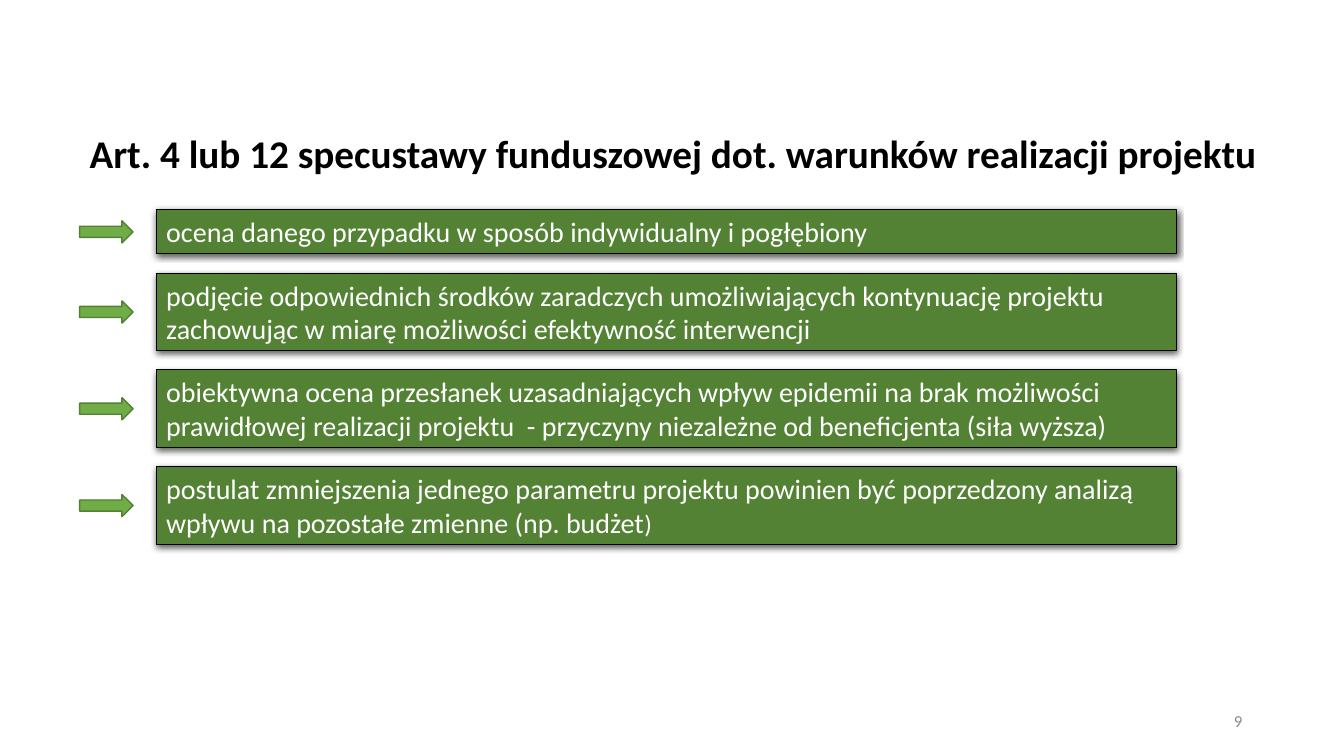
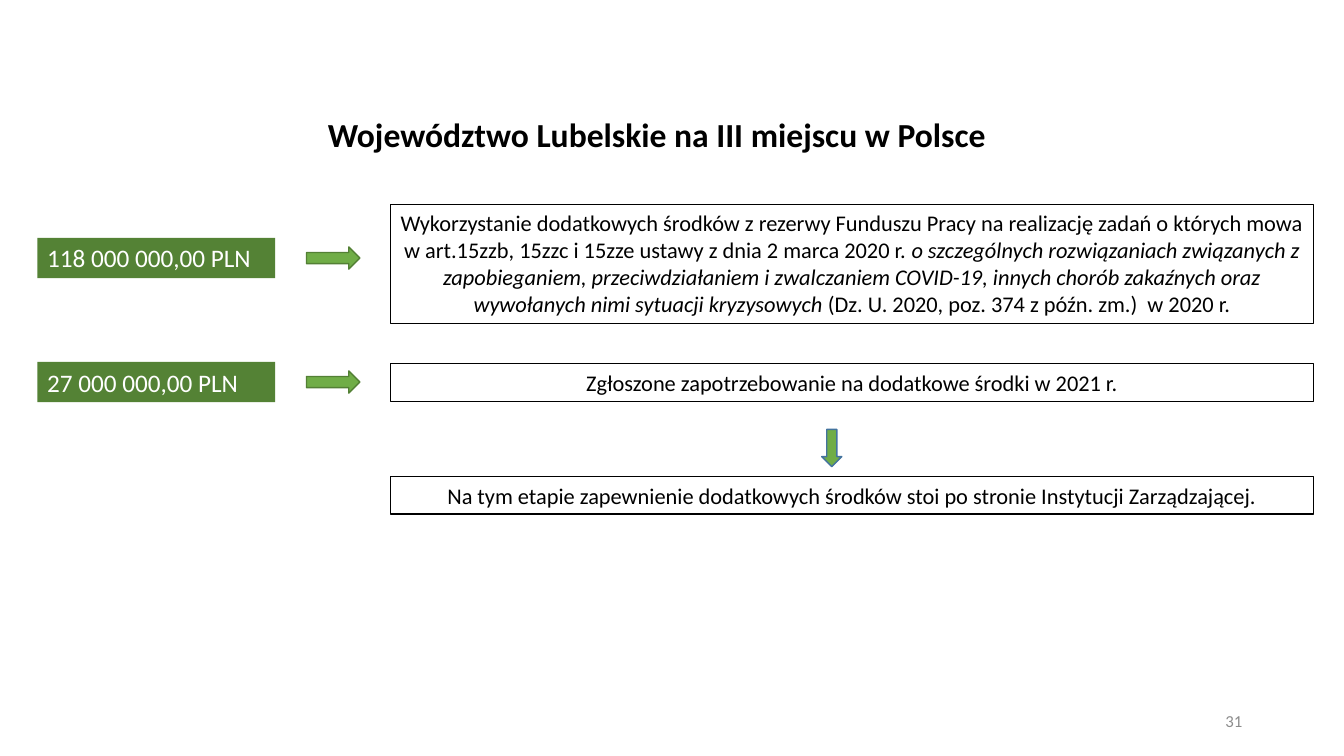
import lxml.etree
import pptx
import pptx.dml.color
import pptx.enum.shapes
import pptx.enum.text
import pptx.oxml.ns
import pptx.util

Inches = pptx.util.Inches
Shapes = pptx.enum.shapes.MSO_SHAPE
Align = pptx.enum.text.PP_ALIGN
Anchor = pptx.enum.text.MSO_ANCHOR

FONT = "Calibri"
BLACK, WHITE, GREY = "000000", "FFFFFF", "8C8C8C"
DARK_GREEN, GREEN, GREEN_EDGE, BLUE_EDGE = "548235", "70AD47", "538035", "43739E"
ARROW_WIDTH, ARROW_HEIGHT = 0.53, 0.22

POSTULATES = [
    (0.44, [("ocena danego przypadku w sposób indywidualny i pogłębiony", {})]),
    (0.77, [("podjęcie odpowiednich środków zaradczych umożliwiających kontynuację projektu "
             "zachowując w miarę możliwości efektywność interwencji", {})]),
    (0.77, [("obiektywna ocena przesłanek uzasadniających wpływ epidemii na brak możliwości "
             "prawidłowej realizacji projektu  - przyczyny niezależne od beneficjenta "
             "(siła wyższa)", {})]),
    (0.77, [("postulat zmniejszenia jednego parametru projektu powinien być poprzedzony analizą "
             "wpływu na pozostałe zmienne (np. budżet", {}),
            (")", {"size": pptx.util.Pt(18)})]),
]
RESERVE_USE = [
    ("Wykorzystanie dodatkowych środków z rezerwy Funduszu Pracy na realizację zadań o których "
     "mowa w art.15zzb, 15zzc i 15zze ustawy z dnia 2 marca 2020 r. ", {}),
    ("o szczególnych rozwiązaniach związanych z zapobieganiem, przeciwdziałaniem i zwalczaniem "
     "COVID-19, innych chorób zakaźnych oraz wywołanych nimi sytuacji kryzysowych ",
     {"italic": True}),
    ("(Dz. U. 2020, poz. 374 z późn. zm.)  w 2020 r.", {}),
]
DEMAND = [("Zgłoszone zapotrzebowanie na dodatkowe środki w 2021 r.", {})]
NEXT_STEP = [("Na tym etapie zapewnienie dodatkowych środków stoi po stronie Instytucji "
              "Zarządzającej.", {})]


def rgb(value):
    return pptx.dml.color.RGBColor.from_string(value)


def write(shape, runs, size, color=BLACK, align=Align.LEFT, anchor=Anchor.TOP,
          bold=False, wrap=True):
    """Fill a shape with one paragraph of (text, font overrides) runs."""
    frame = shape.text_frame
    frame.word_wrap = wrap
    frame.vertical_anchor = anchor
    paragraph = frame.paragraphs[0]
    paragraph.alignment = align
    for text, overrides in runs:
        run = paragraph.add_run()
        run.text = text
        values = {"name": FONT, "size": pptx.util.Pt(size), "bold": bold, **overrides}
        for name, value in values.items():
            setattr(run.font, name, value)
        run.font.color.rgb = rgb(color)


def add_text(slide, box, text, size, **options):
    shape = slide.shapes.add_textbox(*map(Inches, box))
    write(shape, [(text, {})], size, **options)


def add_shape(slide, kind, box, fill=None, line=None, weight=0.75):
    shape = slide.shapes.add_shape(kind, *map(Inches, box))
    shape.shadow.inherit = False
    if fill:
        shape.fill.solid()
        shape.fill.fore_color.rgb = rgb(fill)
    else:
        shape.fill.background()
    if line:
        shape.line.color.rgb = rgb(line)
        shape.line.width = pptx.util.Pt(weight)
    else:
        shape.line.fill.background()
    return shape


def add_shadow(shape):
    effects = shape._element.spPr.find(pptx.oxml.ns.qn("a:effectLst"))
    shadow = lxml.etree.SubElement(
        effects, pptx.oxml.ns.qn("a:outerShdw"), blurRad=str(pptx.util.Pt(4.5)),
        dist=str(pptx.util.Pt(1.5)), dir="5400000", algn="ctr", rotWithShape="0")
    color = lxml.etree.SubElement(shadow, pptx.oxml.ns.qn("a:srgbClr"), val=BLACK)
    lxml.etree.SubElement(color, pptx.oxml.ns.qn("a:alpha"), val="63000")


def add_row_arrow(slide, left, middle):
    box = (left, middle - ARROW_HEIGHT / 2, ARROW_WIDTH, ARROW_HEIGHT)
    add_shape(slide, Shapes.RIGHT_ARROW, box, GREEN, GREEN_EDGE, 1)


def add_outlined_box(slide, box, runs):
    shape = add_shape(slide, Shapes.RECTANGLE, box, line=BLACK)
    write(shape, runs, 16, align=Align.CENTER)


def add_numbered_slide(presentation, number):
    slide = presentation.slides.add_slide(presentation.slide_layouts[6])
    add_text(slide, (9.42, 6.95, 3, 0.4), str(number), 12, color=GREY,
             align=Align.RIGHT, anchor=Anchor.MIDDLE)
    return slide


def add_postulates(slide, left, top, width, gap=0.19):
    """Stack the green bars, each with an arrow before it."""
    bar_left = left + 0.76
    for height, runs in POSTULATES:
        bar = add_shape(slide, Shapes.RECTANGLE, (bar_left, top, width - 0.76, height),
                        DARK_GREEN, BLACK)
        add_shadow(bar)
        write(bar, runs, 20, WHITE)
        add_row_arrow(slide, left, top + height / 2)
        top += height + gap


def add_amount_row(slide, left, middle, amount, box_top, box_height, runs):
    """Place an amount, an arrow and an explanation side by side."""
    label = add_shape(slide, Shapes.RECTANGLE, (left, middle - 0.2, 2.36, 0.4), DARK_GREEN)
    write(label, [(amount, {})], 18, WHITE)
    add_row_arrow(slide, left + 2.67, middle)
    add_outlined_box(slide, (left + 3.5, box_top, 9.16, box_height), runs)


def build_conditions(presentation):
    slide = add_numbered_slide(presentation, 9)
    add_text(slide, (0.79, 1.23, 11.82, 0.57),
             "Art. 4 lub 12 specustawy funduszowej dot. warunków realizacji projektu",
             28, bold=True, wrap=False)
    add_postulates(slide, 0.79, 2.08, 10.88)


def build_funds(presentation):
    slide = add_numbered_slide(presentation, 31)
    add_text(slide, (2.91, 1.08, 7.21, 0.5), "Województwo Lubelskie na III miejscu w Polsce",
             24, bold=True, align=Align.CENTER)
    add_amount_row(slide, 0.37, 2.56, "118 000 000,00 PLN", 2.03, 1.18, RESERVE_USE)
    add_amount_row(slide, 0.37, 3.79, "27 000 000,00 PLN", 3.61, 0.37, DEMAND)
    add_shape(slide, Shapes.DOWN_ARROW, (8.15, 4.26, 0.2, 0.37), GREEN, BLUE_EDGE, 1)
    add_outlined_box(slide, (3.87, 4.73, 9.16, 0.37), NEXT_STEP)


def main():
    presentation = pptx.Presentation()
    presentation.slide_width = Inches(13.33)
    presentation.slide_height = Inches(7.5)
    build_conditions(presentation)
    build_funds(presentation)
    presentation.save("out.pptx")


if __name__ == "__main__":
    main()
